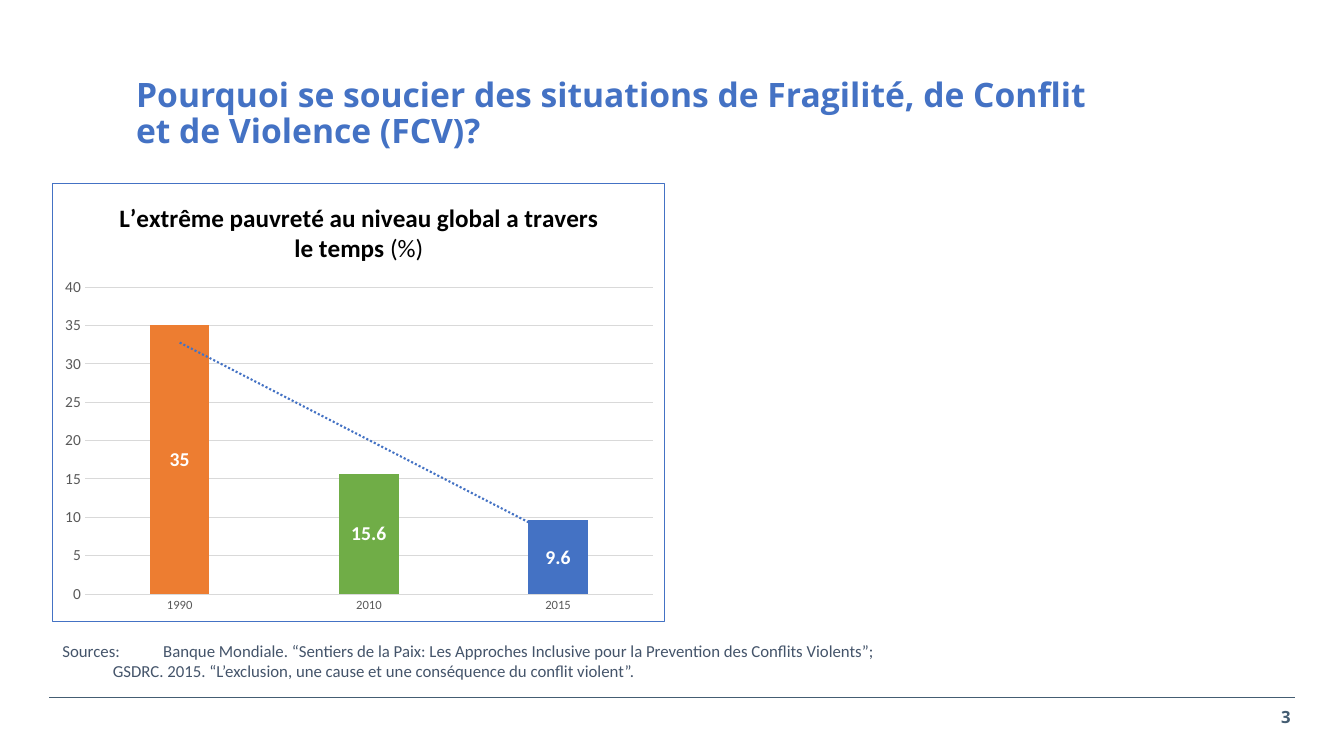
"""Build the slide on extreme poverty and fragile situations."""
from dataclasses import dataclass

from lxml.etree import SubElement as Sub
from pptx import Presentation
from pptx.chart.chart import Chart
from pptx.chart.data import CategoryChartData as Data
from pptx.dml.color import RGBColor as Rgb
from pptx.enum.chart import XL_CHART_TYPE as Kind
from pptx.enum.chart import XL_LABEL_POSITION as Spot
from pptx.enum.chart import XL_TICK_MARK as Tick
from pptx.enum.shapes import MSO_CONNECTOR as Link
from pptx.enum.text import MSO_ANCHOR as Anchor
from pptx.enum.text import MSO_AUTO_SIZE as Fit
from pptx.enum.text import PP_ALIGN as Align
from pptx.oxml import parse_xml
from pptx.oxml.ns import nsdecls, qn
from pptx.slide import Slide
from pptx.text.text import Font, TextFrame
from pptx.util import Inches, Pt

HUES = {
    "blue": "4472C4", "orange": "ED7D31", "green": "70AD47",
    "slate": "445D72", "navy": "44546A", "gray": "595959",
    "grid": "D9D9D9", "black": "000000", "white": "FFFFFF",
}


@dataclass
class Bar:
    """One year of the chart."""
    year: str
    rate: float
    hue: str


@dataclass
class Note:
    """One free text box."""
    box: tuple[float, float, float, float]
    text: str
    style: dict


BARS = [Bar("1990", 35, "orange"), Bar("2010", 15.6, "green"), Bar("2015", 9.6, "blue")]

NOTES = [
    Note((11.78, 6.96, 1.12, 0.3), "3",
         dict(size=12, face="Open Sans", hue="slate", bold=True, align=Align.RIGHT)),
    Note((0.52, 6.31, 8.38, 0.5),
         "Sources: \tBanque Mondiale. “Sentiers de la Paix: Les Approches Inclusive "
         "pour la Prevention des Conflits Violents”;\n"
         "\tGSDRC. 2015. “L’exclusion, une cause et une conséquence du conflit violent”.",
         dict(size=12, hue="navy", wrap=False)),
]


def color(name: str) -> Rgb:
    """Return a named colour."""
    return Rgb.from_string(HUES[name])


def style(font: Font, size: float, hue: str, bold: bool = False, face: str = "Calibri") -> None:
    """Format a font."""
    font.size, font.bold, font.name = Pt(size), bold, face
    font.color.rgb = color(hue)


def write(frame: TextFrame, text: str, *, align: Align = Align.LEFT,
          wrap: bool = True, space: float = 1.0, **look) -> None:
    """Fill a frame with formatted lines."""
    frame.word_wrap, frame.auto_size = wrap, Fit.NONE
    frame.vertical_anchor = Anchor.TOP
    frame.text = text
    for para in frame.paragraphs:
        para.alignment, para.line_spacing = align, space
        for run in para.runs:
            style(run.font, **look)


def stroke(tag: str, hue: str, width: float, dash: str = "solid") -> str:
    """Return chart shape properties with a line."""
    return (f'<c:spPr {nsdecls("c", "a")}><a:ln w="{Pt(width)}"><a:solidFill>'
            f'<a:srgbClr val="{HUES[hue]}"/></a:solidFill>'
            f'<a:prstDash val="{dash}"/></a:ln></c:spPr>') if tag == "border" else (
        f'<c:trendline {nsdecls("c")}>{stroke("border", hue, width, dash)}'
        '<c:trendlineType val="linear"/><c:dispRSqr val="0"/>'
        '<c:dispEq val="0"/></c:trendline>')


def head(chart: Chart) -> None:
    """Set the chart title."""
    chart.has_title = True
    chart.chart_title.include_in_layout = False
    para = chart.chart_title.text_frame.paragraphs[0]
    for text, bold in (("L’extrême pauvreté au niveau global a travers le temps", True),
                       (" (%)", False)):
        run = para.add_run()
        run.text = text
        style(run.font, 18, "black", bold)


def axes(chart: Chart) -> None:
    """Format both axes."""
    years, rates = chart.category_axis, chart.value_axis
    for axis, size in ((years, 9), (rates, 11)):
        axis.major_tick_mark = axis.minor_tick_mark = Tick.NONE
        style(axis.tick_labels.font, size, "gray")
    rates.minimum_scale, rates.maximum_scale, rates.major_unit = 0, 40, 5
    rates.format.line.fill.background()
    for line in (years.format.line, rates.major_gridlines.format.line):
        line.color.rgb, line.width = color("grid"), Pt(0.75)


def plot(slide: Slide) -> None:
    """Add the poverty chart."""
    data = Data()
    data.categories = [bar.year for bar in BARS]
    data.add_series("Series 1", [bar.rate for bar in BARS])
    box = map(Inches, (0.52, 1.82, 6.08, 4.35))
    chart = slide.shapes.add_chart(Kind.COLUMN_CLUSTERED, *box, data).chart
    style(chart.font, 10, "black")
    chart.has_legend = False
    head(chart)
    axes(chart)
    bars = chart.plots[0]
    bars.gap_width, bars.overlap, bars.vary_by_categories = 219, -27, False
    series = bars.series[0]
    series.format.fill.solid()
    series.format.fill.fore_color.rgb = color("blue")
    for spot, bar in enumerate(BARS):
        fill = series.points[spot].format.fill
        fill.solid()
        fill.fore_color.rgb = color(bar.hue)
    tags = series.data_labels
    tags.show_value, tags.position = True, Spot.CENTER
    style(tags.font, 14, "white", True)
    root = chart.element
    root.xpath("//c:ser/c:cat")[0].addprevious(
        parse_xml(stroke("trend", "blue", 1.5, "sysDot")))
    root.find(qn("c:chart")).addnext(parse_xml(stroke("border", "blue", 0.75)))


def rule(slide: Slide) -> None:
    """Add the footer line."""
    ends = map(Inches, (0.49, 6.92, 12.84, 6.92))
    line = slide.shapes.add_connector(Link.STRAIGHT, *ends)
    line.line.color.rgb, line.line.width = color("slate"), Pt(0.5)
    Sub(line.element.spPr, qn("a:effectLst"))


def main() -> None:
    """Build and save the deck."""
    deck = Presentation()
    deck.slide_width, deck.slide_height = Inches(13.33), Inches(7.5)
    slide = deck.slides.add_slide(deck.slide_layouts[5])
    rule(slide)
    title = slide.shapes.title
    title.left, title.top, title.width, title.height = map(Inches, (1.25, 0.73, 9.9, 1.21))
    write(title.text_frame,
          "Pourquoi se soucier des situations de Fragilité, de Conflit et de Violence (FCV)?",
          size=24, face="Open Sans", hue="blue", bold=True, space=0.9)
    for note in NOTES:
        frame = slide.shapes.add_textbox(*map(Inches, note.box)).text_frame
        write(frame, note.text, **note.style)
    plot(slide)
    deck.save("out.pptx")


if __name__ == "__main__":
    main()
